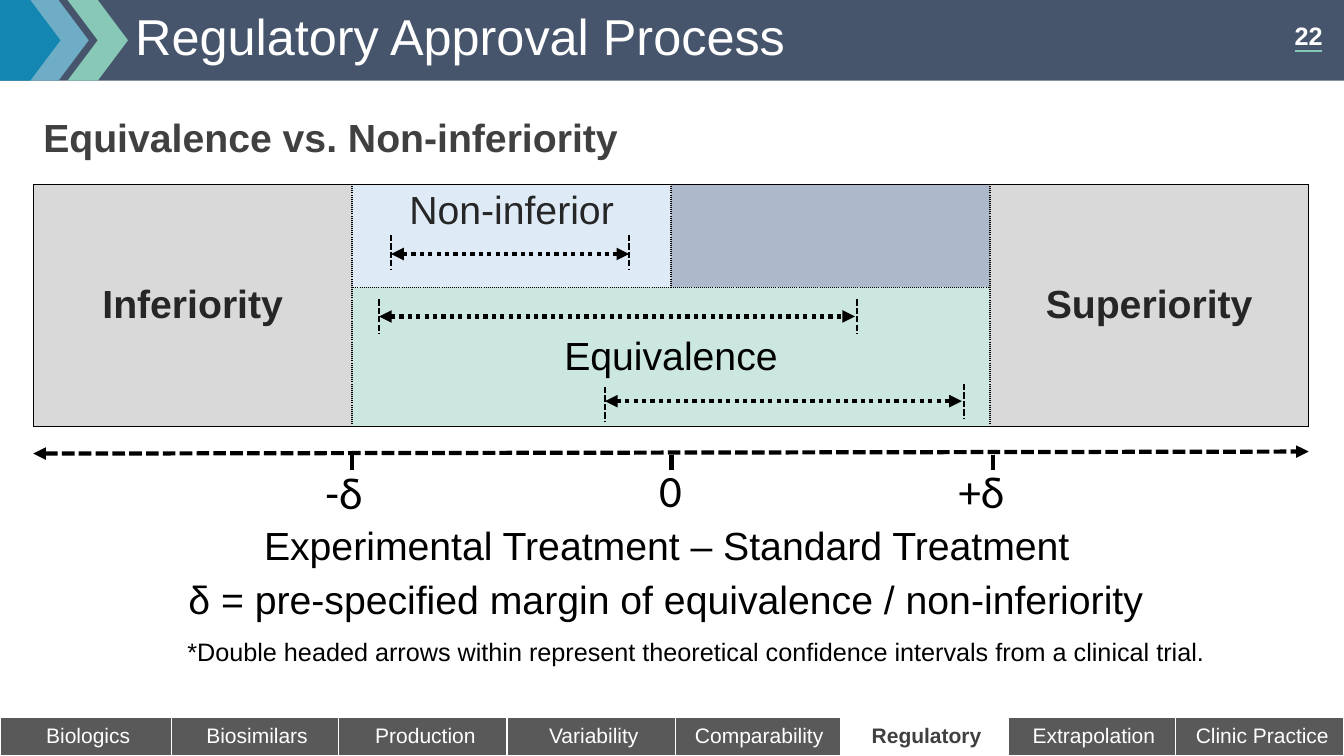
from lxml.etree import SubElement
from pptx import Presentation
from pptx.dml.color import RGBColor
from pptx.enum.dml import MSO_LINE as Dash
from pptx.enum.shapes import MSO_CONNECTOR as Connector, MSO_SHAPE as Shape
from pptx.enum.text import MSO_ANCHOR as Anchor, MSO_AUTO_SIZE as AutoSize, PP_ALIGN as Align
from pptx.oxml.ns import qn
from pptx.util import Inches, Pt

EMU_PER_PX = 9144  # 100 px to the inch
COLORS = {
    "header": "46556C", "mint": "88C8B7", "sky": "6FADC6", "blue": "1386B2",
    "underline": "87C7B6", "white": "FFFFFF", "black": "000000",
    "tab": "595959", "heading": "404040", "label": "262626",
    "outer": "D9D9D9", "non_inferior": "DEEBF7", "above_zero": "ADB9CA",
    "equivalence": "CBE7E0",
}
TABS = [("Biologics", 0, 170), ("Biosimilars", 169, 167), ("Production", 336, 167),
        ("Variability", 503, 167), ("Comparability", 667, 167), ("Regulatory", 833, 167),
        ("Extrapolation", 999, 167), ("Clinic Practice", 1166, 167)]
CURRENT_TAB = "Regulatory"
# arrow left, right, y; then x and top of the left and right end caps
INTERVALS = [
    (376, 848, 314, (376, 297), (850, 297)),
    (600, 954, 398, (600, 384), (956, 381)),
    (388, 624, 252, (388, 233), (624, 233)),
]
CAP_HEIGHT = 34
AXIS_MARKS = [("-δ", 349, 313, 456, 57), ("0", 666, 644, 454, 43), ("+δ", 985, 941, 455, 66)]
SOLID, DOTTED = (0.75, "solid"), (1.5, "sysDot")
FINE_DOTTED = (1, "sysDot")


def px(*lengths):
    return [length * EMU_PER_PX for length in lengths]


def color(name):
    return RGBColor.from_string(COLORS[name])


class SlideBuilder:
    def __init__(self, slide, font="Arial"):
        self.slide = slide
        self.shapes = slide.shapes
        self.font = font

    def add_text(self, frame, text, size, ink, bold=False, align=Align.LEFT, font=None,
                 line_spacing=None):
        paragraph = frame.paragraphs[0]
        paragraph.alignment = align
        if line_spacing:
            paragraph.line_spacing = line_spacing
        run = paragraph.add_run()
        run.text = text
        run.font.name = font or self.font
        run.font.size = Pt(size)
        run.font.bold = bold
        run.font.color.rgb = color(ink)
        return paragraph

    def block(self, kind, box, fill, outline=None):
        shape = self.shapes.add_shape(kind, *px(*box))
        shape.shadow.inherit = False
        shape.fill.solid()
        shape.fill.fore_color.rgb = color(fill)
        if outline:
            shape.line.color.rgb = color(outline)
            shape.line.width = Pt(1)
        else:
            shape.line.fill.background()
        return shape

    def tab(self, text, left, width):
        current = text == CURRENT_TAB
        shape = self.block(Shape.RECTANGLE, (left, 712, width, 38),
                           "white" if current else "tab", "white")
        frame = shape.text_frame
        frame.word_wrap = True
        frame.vertical_anchor = Anchor.MIDDLE
        (frame.margin_left, frame.margin_top,
         frame.margin_right, frame.margin_bottom) = px(7, 4, 2, 4)
        self.add_text(frame, text, 15, "heading" if current else "white", current,
                      Align.CENTER, line_spacing=0.9)

    def label(self, text, box, size, anchor=Anchor.TOP, font=None):
        """Add one unwrapped line of black text."""
        frame = self.shapes.add_textbox(*px(*box)).text_frame
        frame.word_wrap = False
        frame.auto_size = AutoSize.SHAPE_TO_FIT_TEXT
        frame.vertical_anchor = anchor
        self.add_text(frame, text, size, "black", font=font)

    def page_number(self, text, box):
        frame = self.shapes.add_textbox(*px(*box)).text_frame
        frame.word_wrap = True
        frame.vertical_anchor = Anchor.MIDDLE
        frame.margin_left = frame.margin_top = frame.margin_right = frame.margin_bottom = 0
        self.add_text(frame, text, 18, "white", True, Align.CENTER)

    def placeholder(self, index, text, box, size, ink, bold=False, space_before=0):
        """Fill a template placeholder and bring it in front of the header."""
        shape = self.slide.placeholders[index]
        shape.left, shape.top, shape.width, shape.height = px(*box)
        self.shapes._spTree.append(shape._element)
        frame = shape.text_frame
        frame.word_wrap = True
        frame.auto_size = AutoSize.NONE
        frame.vertical_anchor = Anchor.MIDDLE
        paragraph = self.add_text(frame, text, size, ink, bold, line_spacing=0.9)
        paragraph.space_before = Pt(space_before)
        properties = paragraph._p.get_or_add_pPr()
        properties.set("marL", "0")
        properties.set("indent", "0")
        SubElement(properties, qn("a:buNone"))

    def line(self, start, end, width, ink="black", dash=None, arrows=False):
        connector = self.shapes.add_connector(Connector.STRAIGHT, *px(*start, *end))
        connector.line.color.rgb = color(ink)
        connector.line.width = Pt(width)
        if dash:
            connector.line.dash_style = dash
        if arrows:
            outline = connector.line._get_or_add_ln()
            for tag in ("a:headEnd", "a:tailEnd"):
                SubElement(outline, qn(tag), type="triangle")
        SubElement(connector._element.spPr, qn("a:effectLst"))

    def table(self, box, row_heights, column_count):
        table = self.shapes.add_table(len(row_heights), column_count, *px(*box)).table
        table.first_row = table.horz_banding = False
        for row, height in zip(table.rows, row_heights):
            row.height, = px(height)
        return table

    def region(self, table, first, last, fill, borders, text="", bold=False, ink="label",
               anchor=Anchor.MIDDLE):
        """Style the cells from first to last as one; borders run left, right, top, bottom."""
        for row in range(first[0], last[0] + 1):
            for column in range(first[1], last[1] + 1):
                cell = table.cell(row, column)
                properties = cell._tc.get_or_add_tcPr()
                for side, (width, dash) in zip("LRTB", borders):
                    border = SubElement(properties, qn(f"a:ln{side}"), w=str(int(Pt(width))))
                    paint = SubElement(border, qn("a:solidFill"))
                    SubElement(paint, qn("a:srgbClr"), val=COLORS["black"])
                    SubElement(border, qn("a:prstDash"), val=dash)
                cell.fill.solid()
                cell.fill.fore_color.rgb = color(fill)
        origin = table.cell(*first)
        if first != last:
            origin.merge(table.cell(*last))
        origin.vertical_anchor = anchor
        if text:
            self.add_text(origin.text_frame, text, 28, ink, bold, Align.CENTER)


def add_header(builder):
    builder.block(Shape.RECTANGLE, (0, 0, 1333, 80), "header")
    builder.page_number("22", (1275, 12, 46, 47))
    builder.block(Shape.CHEVRON, (67, 0, 60, 80), "mint")
    builder.block(Shape.CHEVRON, (28, 0, 60, 80), "sky")
    builder.line((1284, 51), (1311, 51), 1.5, "underline")
    builder.block(Shape.PENTAGON, (0, 0, 60, 80), "blue")
    builder.placeholder(0, "Regulatory Approval Process", (124, 12, 1150, 53), 36, "white")
    builder.placeholder(1, "Equivalence vs. Non-inferiority", (33, 116, 1265, 45), 28,
                        "heading", True, space_before=10)


def add_regions(builder):
    table = builder.table((33, 183, 1265, 240), (102, 138), 4)
    upper = (DOTTED, DOTTED, SOLID, FINE_DOTTED)
    builder.region(table, (0, 0), (1, 0), "outer", (SOLID, DOTTED, SOLID, SOLID),
                   "Inferiority", True)
    builder.region(table, (0, 1), (0, 1), "non_inferior", upper, "Non-inferior",
                   anchor=Anchor.TOP)
    builder.region(table, (0, 2), (0, 2), "above_zero", upper)
    builder.region(table, (0, 3), (1, 3), "outer", (DOTTED, SOLID, SOLID, SOLID),
                   "Superiority", True)
    builder.region(table, (1, 1), (1, 2), "equivalence",
                   (FINE_DOTTED, FINE_DOTTED, FINE_DOTTED, SOLID), "Equivalence", ink="black")


def add_axis(builder):
    builder.line((33, 450), (1298, 448), 3, dash=Dash.SQUARE_DOT, arrows=True)
    for text, tick, left, top, width in AXIS_MARKS:
        builder.line((tick, 451), (tick, 466), 3)
        builder.label(text, (left, top, width, 64), 32, font="Calibri")


def add_intervals(builder):
    for left, right, y, *caps in INTERVALS:
        builder.line((left, y), (right, y), 3, dash=Dash.ROUND_DOT, arrows=True)
        for x, top in caps:
            builder.line((x, top), (x, top + CAP_HEIGHT), 1.5, dash=Dash.SQUARE_DOT)


def main():
    presentation = Presentation()
    presentation.slide_width, presentation.slide_height = Inches(13.33), Inches(7.5)
    builder = SlideBuilder(presentation.slides.add_slide(presentation.slide_layouts[1]))
    add_header(builder)
    add_regions(builder)
    add_axis(builder)
    add_intervals(builder)
    builder.label("Experimental Treatment – Standard Treatment", (252, 512, 829, 57), 28,
                  Anchor.MIDDLE)
    builder.label("δ = pre-specified margin of equivalence / non-inferiority",
                  (177, 566, 979, 57), 28, Anchor.MIDDLE)
    builder.label("*Double headed arrows within represent theoretical confidence intervals "
                  "from a clinical trial.", (176, 626, 1038, 40), 18)
    for tab in reversed(TABS):
        builder.tab(*tab)
    presentation.save("out.pptx")


if __name__ == "__main__":
    main()
